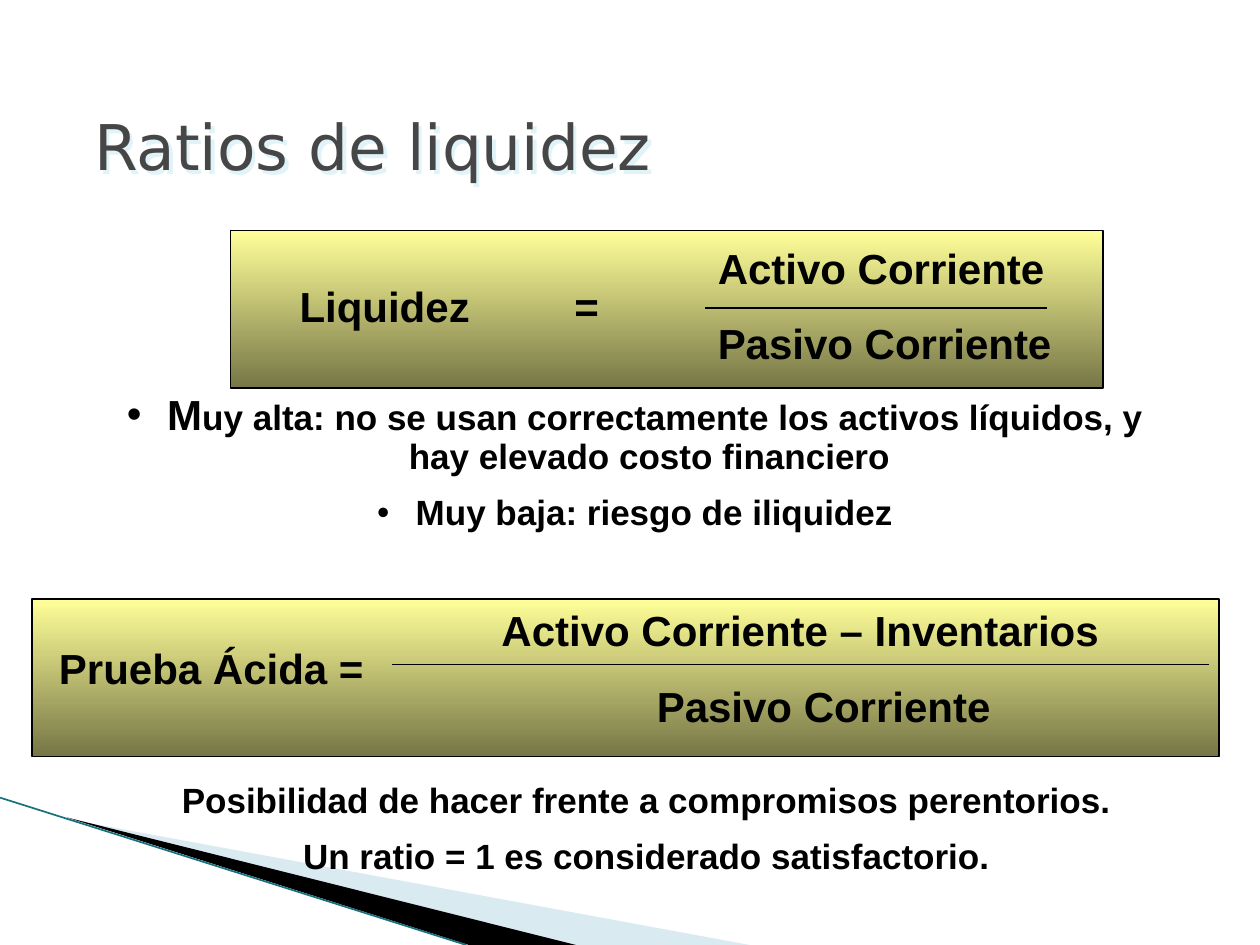
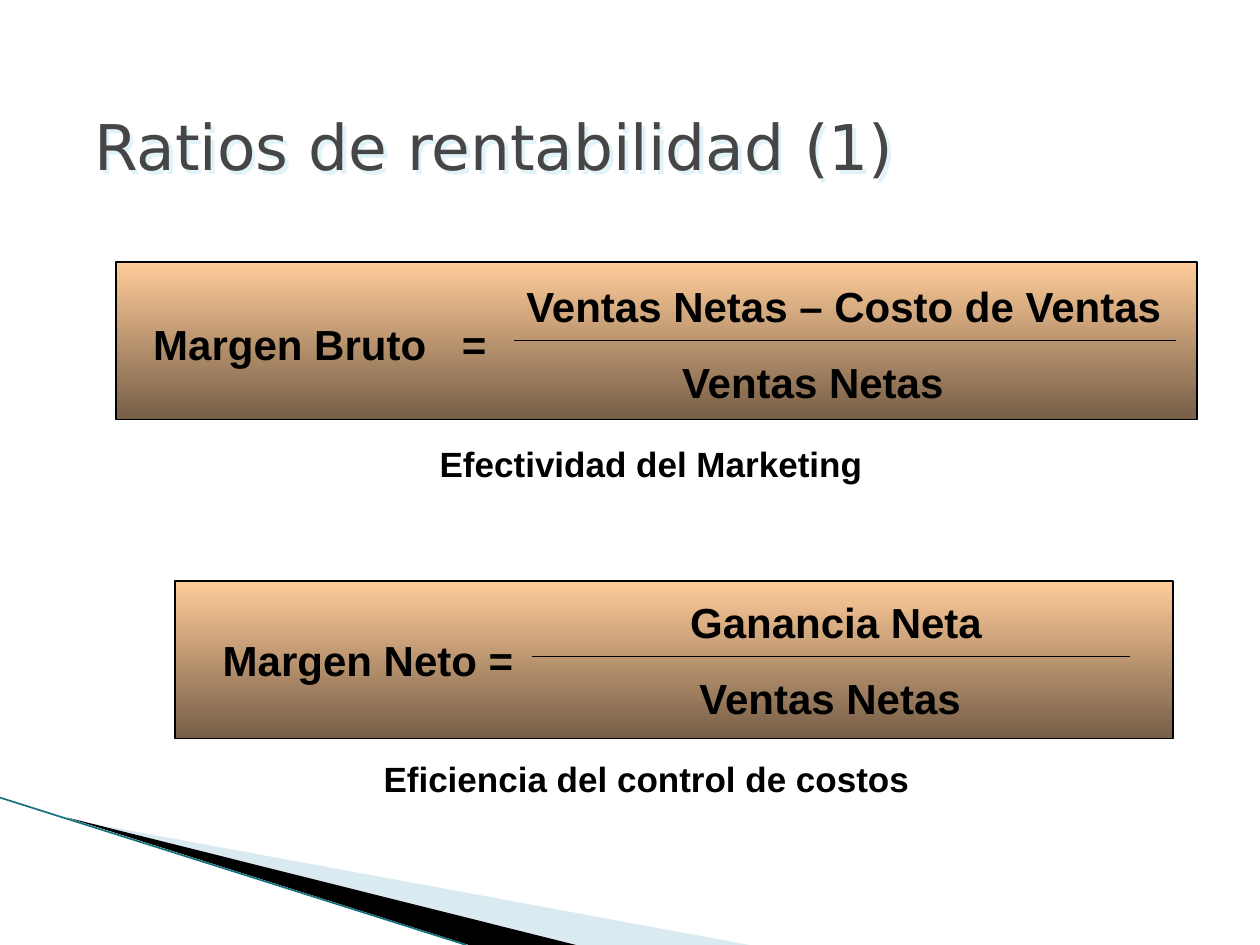
"""Build two slides on liquidity and profitability ratios."""
import pptx
import pptx.util
import pptx.dml.color
import pptx.enum.shapes
import pptx.enum.text
import pptx.oxml
import pptx.oxml.ns

Cm, Pt = pptx.util.Cm, pptx.util.Pt
ALIGN = pptx.enum.text.PP_ALIGN
LEFT, MID = ALIGN.LEFT, ALIGN.CENTER
NS = pptx.oxml.ns.nsdecls("a")

HUES = {
    "ink": "000000", "title": "464646", "glow": "DFF3F8",
    "wing": "A0CBDC", "edge": "17707F",
    "lemon": "FFFF99", "olive": "767647",
    "peach": "FFCC99", "brown": "765E47",
}
WINGS = [
    ("wing", 40, [(1.4, 16.52), (15.11, 19.05), (11.58, 19.05)]),
    ("ink", 100, [(1.35, 16.48), (11.61, 19.05), (9.45, 19.05)]),
]
EDGE = (0, 16.08, 9.4, 19.05)
TALL, STEP, RULE = 3.18, 0.76, 1.33

SLIDES = [
    {
        "title": "Ratios de liquidez",
        "fade": ("lemon", "olive"),
        "ratios": [
            {"frame": (4.65, 4.65, 17.58), "top": 4.88, "gap": 0.9,
             "label": ("Liquidez\t=", 5.79, 10, LEFT), "tab": 5.54,
             "over": ("Activo Corriente", 14.22, 10.54, LEFT),
             "under": ("Pasivo Corriente", 14.22, 10.54, LEFT),
             "bar": (14.22, 21.11)},
            {"frame": (0.64, 12.07, 23.93), "top": 12.07, "gap": 1,
             "label": ("Prueba Ácida =", 0.94, 10, LEFT), "tab": None,
             "over": ("Activo Corriente – Inventarios", 9.86, 15, LEFT),
             "under": ("Pasivo Corriente", 10.13, 12.95, MID),
             "bar": (7.9, 24.38)},
        ],
        "notes": [
            (2.11, 7.82, 3.12, True, [
                [(" M", 24), ("uy alta: no se usan correctamente los activos "
                              "líquidos, y hay elevado costo financiero", 20)],
                [(" Muy baja: riesgo de iliquidez", 20)]]),
            (2.34, 15.67, 2.21, False, [
                [("Posibilidad de hacer frente a compromisos perentorios.", 20)],
                [("Un ratio = 1 es considerado satisfactorio.", 20)]]),
        ],
    },
    {
        "title": "Ratios de rentabilidad (1)",
        "fade": ("peach", "brown"),
        "ratios": [
            {"frame": (2.34, 5.28, 21.79), "top": 5.54, "gap": 1,
             "label": ("Margen Bruto\t=", 2.84, 9.5, LEFT), "tab": 6.22,
             "over": ("Ventas Netas – Costo de Ventas", 10.36, 13.77, LEFT),
             "under": ("Ventas Netas", 10.57, 11.63, MID),
             "bar": (10.36, 23.7)},
            {"frame": (3.53, 11.71, 20.12), "top": 11.91, "gap": 1,
             "label": ("Margen Neto =", 4.24, 9, LEFT), "tab": None,
             "over": ("Ganancia Neta", 10.72, 12.27, MID),
             "under": ("Ventas Netas", 10.92, 11.63, MID),
             "bar": (10.72, 22.78)},
        ],
        "notes": [
            (2.43, 8.89, 1.09, False, [[("Efectividad del Marketing", 20)]]),
            (2.34, 15.24, 1.09, False,
             [[("Eficiencia del control de costos", 20)]]),
        ],
    },
]


def hue(name):
    return pptx.dml.color.RGBColor.from_string(HUES[name])


def grow(node, body):
    tag, rest = body.split(" ", 1) if " " in body else (body, "")
    item = pptx.oxml.parse_xml(f"<{tag} {NS} {rest}")
    node.append(item)


def style(run, size, face="Arial", name="ink", bold=True):
    font = run.font
    font.size, font.name, font.bold = Pt(size), face, bold
    font.color.rgb = hue(name)


def add_box(slide, x, y, wide, high):
    box = slide.shapes.add_textbox(Cm(x), Cm(y), Cm(wide), Cm(high))
    box.text_frame.word_wrap = True
    return box


def add_line(slide, x1, y1, x2, y2, name, width):
    line = slide.shapes.add_connector(
        pptx.enum.shapes.MSO_CONNECTOR.STRAIGHT, Cm(x1), Cm(y1), Cm(x2), Cm(y2))
    line.line.color.rgb, line.line.width = hue(name), Pt(width)
    grow(line._element.spPr, "a:effectLst />")


def add_wings(slide):
    for name, alpha, points in WINGS:
        dots = [(Cm(x), Cm(y)) for x, y in points]
        form = slide.shapes.build_freeform(*dots[0])
        form.add_line_segments(dots[1:], close=True)
        wing = form.convert_to_shape()
        wing.shadow.inherit = False
        wing.line.fill.background()
        wing.fill.solid()
        wing.fill.fore_color.rgb = hue(name)
        if alpha < 100:
            tint = wing._element.spPr.find(".//" + pptx.oxml.ns.qn("a:srgbClr"))
            grow(tint, f'a:alpha val="{alpha * 1000}"/>')
    add_line(slide, *EDGE, "edge", 0.95)


def add_title(slide, text):
    box = add_box(slide, 1.65, 0.74, 23.11, 3.07)
    frame = box.text_frame
    frame.vertical_anchor = pptx.enum.text.MSO_ANCHOR.BOTTOM
    frame.text = text
    frame.paragraphs[0].line_spacing = 0.8
    style(frame.paragraphs[0].runs[0], 36, "DejaVu Sans", "title", False)
    grow(box._element.spPr,
         'a:effectLst ><a:outerShdw dist="38100" dir="2700000" algn="tl">'
         f'<a:srgbClr val="{HUES["glow"]}"/></a:outerShdw></a:effectLst>')


def add_frame(slide, x, y, wide, fade):
    rect = slide.shapes.add_shape(
        pptx.enum.shapes.MSO_SHAPE.RECTANGLE, Cm(x), Cm(y), Cm(wide), Cm(TALL))
    rect.shadow.inherit = False
    rect.fill.gradient()
    rect.fill.gradient_angle = 270
    for stop, name in zip(rect.fill.gradient_stops, fade):
        stop.color.rgb = hue(name)
    rect.line.color.rgb, rect.line.width = hue("ink"), Pt(1)


def add_ratio(slide, ratio, fade):
    add_frame(slide, *ratio["frame"], fade)
    top = ratio["top"]
    for row, part in enumerate(("over", "label", "under")):
        text, x, wide, align = ratio[part]
        frame = add_box(slide, x, top + row * STEP, wide, 1.2).text_frame
        frame.text = text
        para = frame.paragraphs[0]
        para.alignment, para.line_spacing = align, ratio["gap"]
        if part == "label" and ratio["tab"]:
            grow(para._p.get_or_add_pPr(),
                 f'a:tabLst ><a:tab pos="{Cm(ratio["tab"])}" algn="l"/></a:tabLst>')
        style(para.runs[0], 24)
    left, right = ratio["bar"]
    add_line(slide, left, top + RULE, right, top + RULE, "ink", 0.75)


def add_note(slide, x, y, high, dots, paras):
    frame = add_box(slide, x, y, 21.39, high).text_frame
    for rank, parts in enumerate(paras):
        para = frame.add_paragraph() if rank else frame.paragraphs[0]
        para.alignment, para.line_spacing = MID, 0.9
        if rank:
            para.space_before = Pt(10.5)
        if dots:
            props = para._p.get_or_add_pPr()
            props.set("marL", str(Cm(0.58)))
            props.set("indent", str(-Cm(0.58)))
            grow(props, 'a:buFont typeface="Arial"/>')
            grow(props, 'a:buChar char="•"/>')
        for text, size in parts:
            run = para.add_run()
            run.text = text
            style(run, size)


def main():
    deck = pptx.Presentation()
    deck.slide_width, deck.slide_height = Cm(25.4), Cm(19.05)
    for page in SLIDES:
        slide = deck.slides.add_slide(deck.slide_layouts[6])
        add_wings(slide)
        for ratio in page["ratios"]:
            add_ratio(slide, ratio, page["fade"])
        for note in page["notes"]:
            add_note(slide, *note)
        add_title(slide, page["title"])
    deck.save("out.pptx")


if __name__ == "__main__":
    main()
